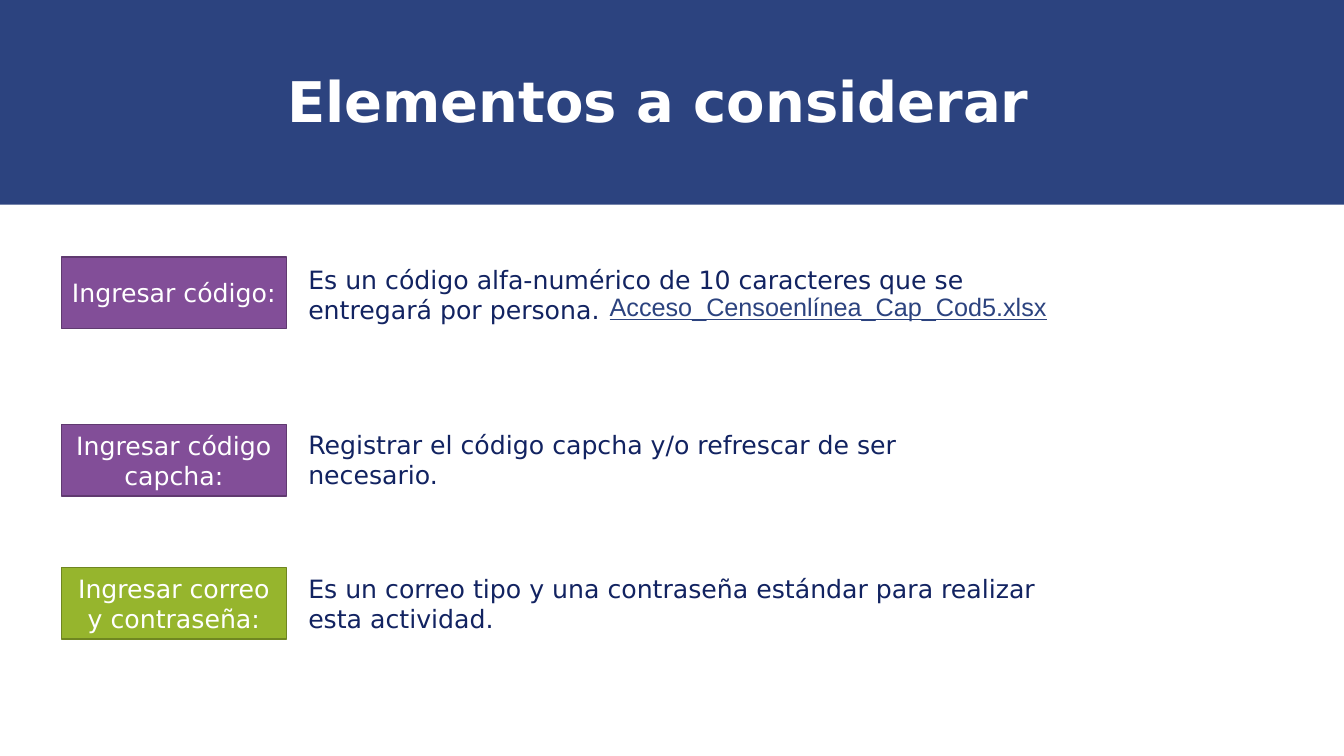
import dataclasses

import pptx
import pptx.dml.color
import pptx.enum.shapes
import pptx.enum.text
import pptx.util

Pt = pptx.util.Pt
RGB = pptx.dml.color.RGBColor.from_string
ANCHOR = pptx.enum.text.MSO_ANCHOR
ALIGN = pptx.enum.text.PP_ALIGN


@dataclasses.dataclass(frozen=True)
class Theme:
    font: str = "DejaVu Sans"
    link_font: str = "Arial"
    title_size: int = 40
    body_size: int = 18
    white: str = "FFFFFF"
    banner: str = "2C437F"
    body: str = "122361"
    purple: tuple = ("824E98", "603A70")
    green: tuple = ("96B52D", "6F8621")


THEME = Theme()
LABEL_LEFT, LABEL_WIDTH, ROW_HEIGHT = 43.9, 160.6, 51.1
BODY_LEFT = 213.1
ROWS = [
    ("Ingresar código:",
     "Es un código alfa-numérico de 10 caracteres que se entregará por persona.",
     THEME.purple, 183.6, 185, 563),
    ("Ingresar código capcha:",
     "Registrar el código capcha y/o refrescar de ser necesario.",
     THEME.purple, 303.1, 303.1, 530),
    ("Ingresar correo y contraseña:",
     "Es un correo tipo y una contraseña estándar para realizar esta actividad.",
     THEME.green, 405.4, 406.1, 563),
]


def write(sp, text, size, color, font=THEME.font, bold=False, underline=False,
          anchor=ANCHOR.TOP, align=ALIGN.LEFT):
    tf = sp.text_frame
    tf.word_wrap = True
    tf.vertical_anchor = anchor
    tf.text = text
    p = tf.paragraphs[0]
    p.alignment = align
    r = p.runs[0]
    r.font.name = font
    r.font.size = Pt(size)
    r.font.bold = bold
    r.font.underline = underline
    r.font.color.rgb = RGB(color)
    return tf


def add_box(slide, left, top, width, height, fill, line=None):
    sp = slide.shapes.add_shape(pptx.enum.shapes.MSO_SHAPE.RECTANGLE,
                                Pt(left), Pt(top), Pt(width), Pt(height))
    sp.shadow.inherit = False
    sp.fill.solid()
    sp.fill.fore_color.rgb = RGB(fill)
    if line:
        sp.line.color.rgb = RGB(line)
        sp.line.width = Pt(1)
    else:
        sp.line.fill.background()
    return sp


def add_text(slide, left, top, width, height, text, size, color, **style):
    sp = slide.shapes.add_textbox(Pt(left), Pt(top), Pt(width), Pt(height))
    return write(sp, text, size, color, **style)


def add_banner(slide, title):
    add_box(slide, 0, 0, 960, 146.2, THEME.banner)
    tf = add_text(slide, 205.2, 41, 654.5, 67, title, THEME.title_size,
                  THEME.white, bold=True, anchor=ANCHOR.MIDDLE)
    tf.margin_left = tf.margin_right = 0
    tf.paragraphs[0].line_spacing = 0.9


def add_row(slide, label, body, colors, label_top, body_top, body_width):
    sp = add_box(slide, LABEL_LEFT, label_top, LABEL_WIDTH, ROW_HEIGHT, *colors)
    write(sp, label, THEME.body_size, THEME.white,
          anchor=ANCHOR.MIDDLE, align=ALIGN.CENTER)
    add_text(slide, BODY_LEFT, body_top, body_width, ROW_HEIGHT, body,
             THEME.body_size, THEME.body)


def main():
    prs = pptx.Presentation()
    prs.slide_width, prs.slide_height = Pt(960), Pt(540)
    slide = prs.slides.add_slide(prs.slide_layouts[6])
    add_banner(slide, "Elementos a considerar")
    for row in ROWS:
        add_row(slide, *row)
    add_text(slide, 428.4, 204, 345, 30, "Acceso_Censoenlínea_Cap_Cod5.xlsx",
             THEME.body_size, THEME.banner, font=THEME.link_font,
             underline=True, anchor=ANCHOR.MIDDLE)
    prs.save("out.pptx")


if __name__ == "__main__":
    main()
